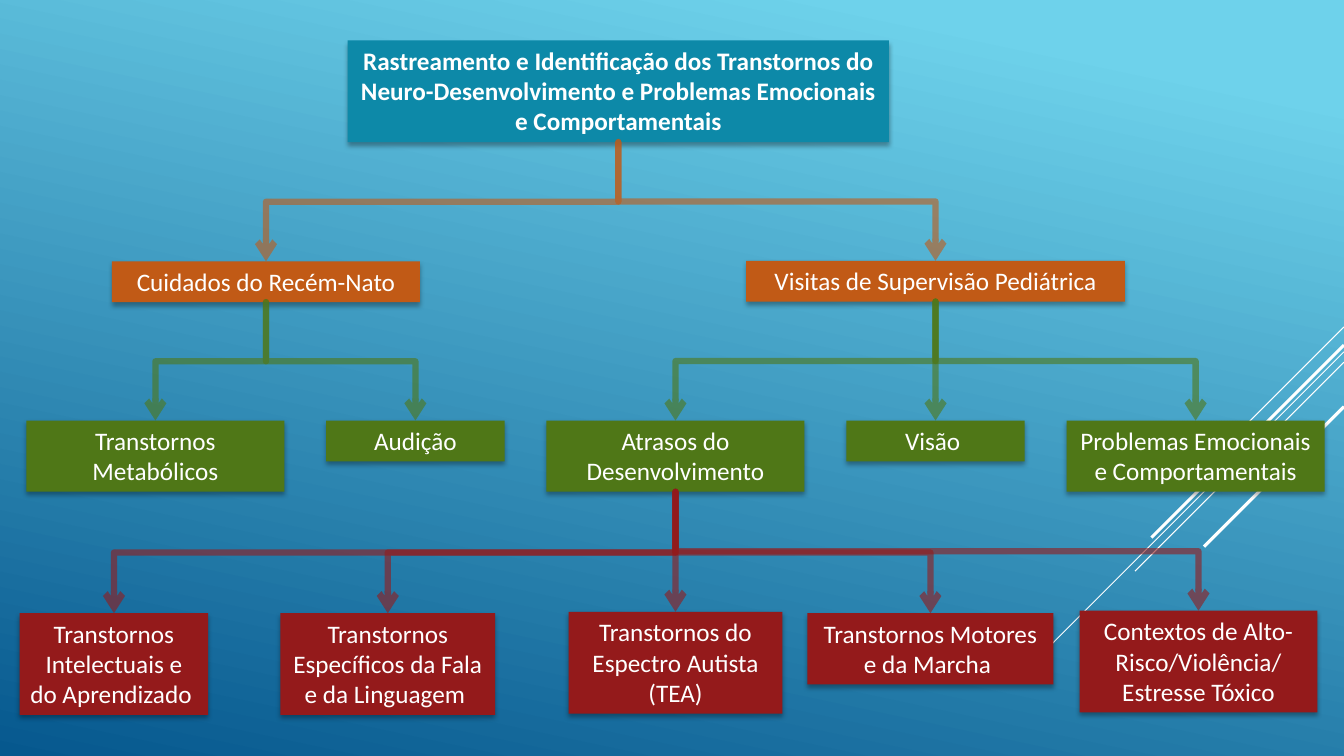
from lxml import etree
from pptx import Presentation
from pptx.dml.color import RGBColor
from pptx.enum.shapes import MSO_CONNECTOR as Connector, MSO_SHAPE as Preset
from pptx.enum.text import MSO_ANCHOR as Anchor, MSO_AUTO_SIZE as AutoSize, PP_ALIGN as Align
from pptx.oxml.ns import qn
from pptx.util import Pt

WIDTH, HEIGHT = 960, 540
TEAL, ORANGE, GREEN, RED, WHITE = "0D89A8", "C15A16", "4F7717", "941A1B", "FFFFFF"
COLUMNS = [111 + 185.75 * index for index in range(5)]

# Each diagonal: start y on the right edge, horizontal run, line width
DIAGONALS = [
    (233.5, 72, 0.75),
    (251.3, 234.9, 0.75),
    (258.7, 149.3, 0.75),
    (246.5, 137.5, 2.25),
    (290.5, 100, 2.25),
]

# Each level: fill, boxes. Each box: paragraphs, text lines, centre x, top, width, parent index
LEVELS = [
    (TEAL, [
        (["Rastreamento e Identificação dos Transtornos do Neuro-Desenvolvimento "
          "e Problemas Emocionais e Comportamentais"], 3, 441.7, 28.8, 386.6, None),
    ]),
    (ORANGE, [
        (["Cuidados do Recém-Nato"], 1, 190, 186.7, 220, 0),
        (["Visitas de Supervisão Pediátrica"], 1, COLUMNS[3], 186.3, 270.7, 0),
    ]),
    (GREEN, [
        (["Transtornos", "Metabólicos"], 2, COLUMNS[0], 300.4, 184.3, 0),
        (["Audição"], 1, COLUMNS[1], 300.4, 127.4, 0),
        (["Atrasos do Desenvolvimento"], 2, COLUMNS[2], 300.4, 184.3, 1),
        (["Visão "], 1, COLUMNS[3], 300.4, 127.4, 1),
        (["Problemas Emocionais e Comportamentais"], 2, COLUMNS[4], 300.4, 184.3, 1),
    ]),
    (RED, [
        (["Transtornos Intelectuais e do Aprendizado "], 3, 81.4, 438, 134.6, 2),
        (["Transtornos Específicos da Fala e da Linguagem "], 3, 277, 438, 153.4, 2),
        (["Transtornos do Espectro Autista (TEA)"], 3, COLUMNS[2], 437, 152.6, 2),
        (["Transtornos Motores e da Marcha "], 2, 664.6, 438, 175.7, 2),
        (["Contextos de Alto-Risco/Violência/", "Estresse Tóxico"], 3, 856.1, 436.2, 169.9, 2),
    ]),
]


def color(value):
    return RGBColor.from_string(value)


def add_child(parent, tag, **attributes):
    return etree.SubElement(parent, qn(tag), attributes)


def add_line(slide, kind, start, end, line_color, width):
    connector = slide.shapes.add_connector(kind, *map(Pt, (*start, *end)))
    connector.line.color.rgb = color(line_color)
    connector.line.width = Pt(width)
    add_child(connector._element.spPr, "a:effectLst")
    return connector


def add_box(slide, fill, paragraphs, lines, center, top, width, bold):
    height = 7.3 + 21.8 * lines
    shape = slide.shapes.add_shape(
        Preset.RECTANGLE, Pt(center - width / 2), Pt(top), Pt(width), Pt(height))
    shape.fill.solid()
    shape.fill.fore_color.rgb = color(fill)
    shape.line.fill.background()
    shape.shadow.inherit = False
    effects = shape._element.spPr.find(qn("a:effectLst"))
    shadow = add_child(effects, "a:outerShdw", blurRad=str(Pt(3.5)), dist=str(Pt(2.2)),
                       dir="5400000", rotWithShape="0")
    shadow_color = add_child(shadow, "a:srgbClr", val="000000")
    add_child(shadow_color, "a:alpha", val="32000")

    frame = shape.text_frame
    frame.word_wrap = True
    frame.auto_size = AutoSize.SHAPE_TO_FIT_TEXT
    frame.vertical_anchor = Anchor.TOP
    for index, text in enumerate(paragraphs):
        paragraph = frame.add_paragraph() if index else frame.paragraphs[0]
        paragraph.alignment = Align.CENTER
        run = paragraph.add_run()
        run.text = text
        run.font.name = "Calibri"
        run.font.size = Pt(18)
        run.font.bold = bold
        run.font.color.rgb = color(WHITE)
    return shape


def link(slide, parent, child, line_color):
    """Join the parent's bottom to the child's top, bending halfway down if needed."""
    start_x, end_x = (box.left + box.width // 2 for box in (parent, child))
    start_y, end_y = parent.top + parent.height, child.top
    run, drop = end_x - start_x, end_y - start_y
    straight = abs(run) < Pt(1)
    kind = Connector.STRAIGHT if straight else Connector.ELBOW
    points = [(start_x / Pt(1), start_y / Pt(1)), (end_x / Pt(1), end_y / Pt(1))]
    connector = add_line(slide, kind, *points, line_color, 4.5)
    connector.begin_connect(parent, 2)
    connector.end_connect(child, 0)
    if not straight:
        # A vertical-first elbow is a horizontal-first one turned by a quarter
        connector.width, connector.height = drop, abs(run)
        connector.left = (start_x + end_x - drop) // 2
        connector.top = (start_y + end_y - abs(run)) // 2
        transform = connector._element.spPr.find(qn("a:xfrm"))
        transform.set("rot", "5400000" if run < 0 else "16200000")
        transform.set("flipH", "0" if run < 0 else "1")
        transform.set("flipV", "0")
    outline = connector.line._get_or_add_ln()
    outline.set("cap", "rnd")
    add_child(outline.find(".//" + qn("a:srgbClr")), "a:alpha", val="60000")
    add_child(outline, "a:round")
    add_child(outline, "a:tailEnd", type="arrow")


def main():
    presentation = Presentation()
    presentation.slide_width, presentation.slide_height = Pt(WIDTH), Pt(HEIGHT)
    slide = presentation.slides.add_slide(presentation.slide_layouts[6])

    background = slide.background.fill
    background.gradient()
    background.gradient_angle = 360 - 102
    for stop, (position, value) in zip(background.gradient_stops,
                                       [(0.1, "6ED2EB"), (1, "06588E")]):
        stop.position = position
        stop.color.rgb = color(value)

    for top, run, width in DIAGONALS:
        add_line(slide, Connector.STRAIGHT, (WIDTH, top), (WIDTH - run, top + run), WHITE, width)

    boxes = [[add_box(slide, fill, *box[:-1], bold=fill == TEAL) for box in content]
             for fill, content in LEVELS]
    for depth in range(len(LEVELS) - 1, 0, -1):
        fill, content = LEVELS[depth]
        for child, (*_, parent_index) in zip(boxes[depth], content):
            link(slide, boxes[depth - 1][parent_index], child, fill)

    presentation.save("out.pptx")


if __name__ == "__main__":
    main()
